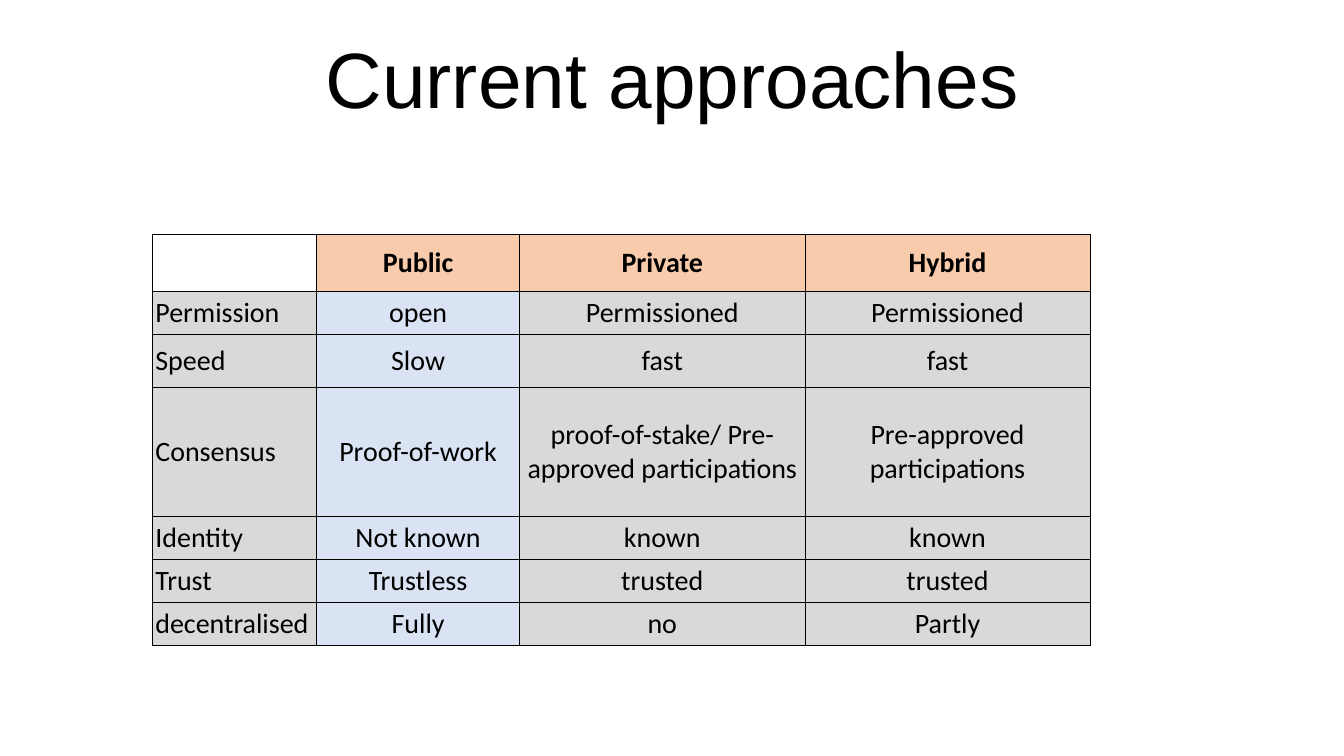
from lxml import etree
from pptx import Presentation
from pptx.dml.color import RGBColor
from pptx.enum.text import MSO_ANCHOR, MSO_AUTO_SIZE, PP_ALIGN
from pptx.oxml import parse_xml
from pptx.oxml.ns import nsdecls
from pptx.util import Pt

COLORS = {
    "text": "000000",
    "border": "000000",
    "header": "F8CBAD",
    "public": "DAE3F3",
    "plain": "D9D9D9",
}
ROWS = [
    ["", "Public", "Private", "Hybrid"],
    ["Permission", "open", "Permissioned", "Permissioned"],
    ["Speed", "Slow", "fast", "fast"],
    ["Consensus", "Proof-of-work", "proof-of-stake/ Pre-approved participations",
     "Pre-approved participations"],
    ["Identity", "Not known", "known", "known"],
    ["Trust", "Trustless", "trusted", "trusted"],
    ["decentralised", "Fully", "no", "Partly"],
]
COLUMN_WIDTHS = [235.2, 290.2, 407.5, 407.5]
ROW_HEIGHTS = [81.4, 61.4, 76.2, 183.8, 61.4, 61.4, 61.4]


def color(name):
    return RGBColor.from_string(COLORS[name])


def add_borders(cell):
    properties = cell._tc.get_or_add_tcPr()
    for side in ("lnL", "lnR", "lnT", "lnB"):
        properties.append(parse_xml(
            f'<a:{side} {nsdecls("a")} w="{Pt(1)}"><a:solidFill>'
            f'<a:srgbClr val="{COLORS["border"]}"/></a:solidFill></a:{side}>'))


presentation = Presentation()
presentation.slide_width = Pt(1920)
presentation.slide_height = Pt(1080)
slide = presentation.slides.add_slide(presentation.slide_layouts[5])

title = slide.shapes.title
title.left, title.top, title.width, title.height = Pt(133), Pt(28), Pt(1654), Pt(180)
title.text_frame.text = "Current approaches"
title.text_frame.auto_size = MSO_AUTO_SIZE.NONE
title.text_frame.vertical_anchor = MSO_ANCHOR.MIDDLE
heading = title.text_frame.paragraphs[0]
heading.alignment = PP_ALIGN.CENTER
heading.line_spacing = 0.9
heading.font.name = "Arial"
heading.font.size = Pt(112)
heading.font.color.rgb = color("text")

table = slide.shapes.add_table(
    len(ROWS), len(COLUMN_WIDTHS), Pt(217), Pt(335),
    Pt(sum(COLUMN_WIDTHS)), Pt(sum(ROW_HEIGHTS))).table
table.horz_banding = False
for column, width in zip(table.columns, COLUMN_WIDTHS):
    column.width = Pt(width)
for row, height in zip(table.rows, ROW_HEIGHTS):
    row.height = Pt(height)

for row_index, texts in enumerate(ROWS):
    for column_index, text in enumerate(texts):
        cell = table.cell(row_index, column_index)
        add_borders(cell)
        cell.margin_left = cell.margin_right = Pt(5)
        cell.margin_top = cell.margin_bottom = Pt(0)
        cell.vertical_anchor = MSO_ANCHOR.MIDDLE
        if not text:
            cell.fill.background()
            continue
        if row_index == 0:
            fill_name = "header"
        else:
            fill_name = "public" if column_index == 1 else "plain"
        cell.fill.solid()
        cell.fill.fore_color.rgb = color(fill_name)
        cell.text = text
        paragraph = cell.text_frame.paragraphs[0]
        paragraph.alignment = PP_ALIGN.CENTER if column_index else PP_ALIGN.LEFT
        paragraph.font.name = "Calibri"
        paragraph.font.size = Pt(40)
        paragraph.font.bold = row_index == 0
        paragraph.font.color.rgb = color("text")

presentation.save("out.pptx")
